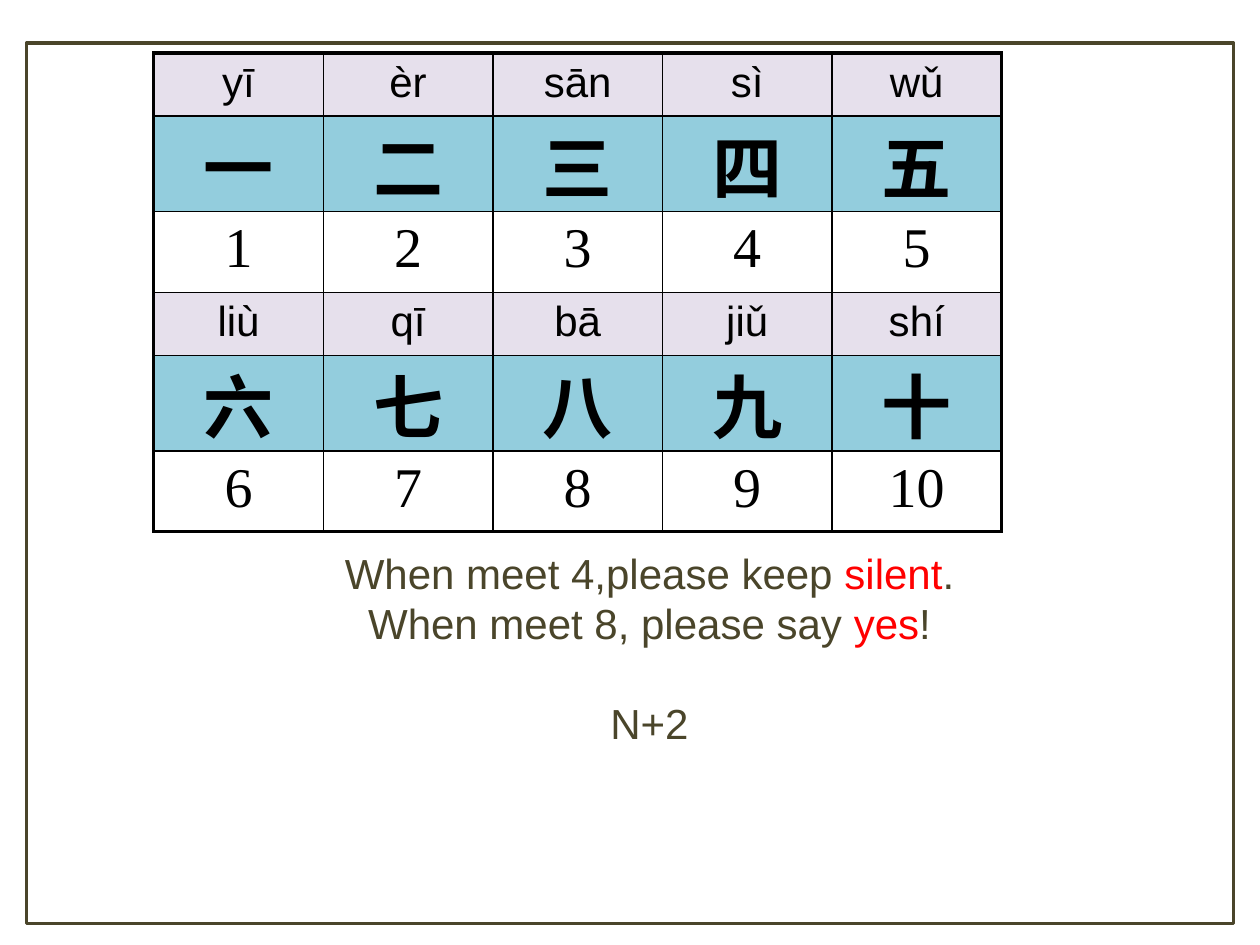
"""Build a slide with the Chinese numbers one to ten and the rules of a counting game."""
from lxml import etree
from pptx import Presentation
from pptx import util as u
from pptx.dml.color import RGBColor
from pptx.enum import shapes, text
from pptx.oxml.ns import qn

COLORS = {"black": "000000", "olive": "4A452A", "red": "FF0000",
          "lilac": "E6E0EC", "aqua": "93CDDD"}


def add_text(paragraph, content, font="Arial", size=24, color="olive", bold=False):
    paragraph.alignment = text.PP_ALIGN.CENTER
    run = paragraph.add_run()
    run.text = content
    run.font.name, run.font.size, run.font.bold = font, u.Pt(size), bold
    run.font.color.rgb = RGBColor.from_string(COLORS[color])
    etree.SubElement(run.font._element, qn("a:ea"), typeface=font)


def add_border(cell, side, width):
    line = etree.SubElement(cell._tc.get_or_add_tcPr(), qn(f"a:ln{side}"), w=str(u.Pt(width)))
    fill = etree.SubElement(line, qn("a:solidFill"))
    etree.SubElement(fill, qn("a:srgbClr"), val=COLORS["black"])


presentation = Presentation()
presentation.slide_width, presentation.slide_height = u.Inches(10), u.Inches(7.5)
slide = presentation.slides.add_slide(presentation.slide_layouts[6])
left = u.Inches(1.22)

numbers = [
    ["yī", "èr", "sān", "sì", "wǔ"], list("一二三四五"), list("12345"),
    ["liù", "qī", "bā", "jiǔ", "shí"], list("六七八九十"), ["6", "7", "8", "9", "10"],
]
row_styles = [
    {"height": 0.5, "fill": "lilac", "format": {"size": 24}},
    {"height": 0.76, "fill": "aqua",
     "format": {"font": "Noto Sans CJK SC", "size": 40, "bold": True}},
    {"height": 0.64, "fill": None, "format": {"font": "Times New Roman", "size": 32}},
]
row_count, column_count = len(numbers), len(numbers[0])
table_height = 2 * sum(style["height"] for style in row_styles)
table = slide.shapes.add_table(row_count, column_count, left, u.Inches(0.42),
                               u.Inches(6.73), u.Inches(table_height)).table
table.first_row = table.horz_banding = False

for row, words in enumerate(numbers):
    style = row_styles[row % len(row_styles)]
    table.rows[row].height = u.Inches(style["height"])
    for column, word in enumerate(words):
        cell = table.cell(row, column)
        cell.margin_left = cell.margin_right = u.Inches(0.07)
        cell.margin_top = cell.margin_bottom = u.Inches(0.05)
        paragraph = cell.text_frame.paragraphs[0]
        add_text(paragraph, word, color="black", **style["format"])
        if style["fill"] == "aqua":
            paragraph.line_spacing = 0.8
            cell.margin_top, cell.margin_bottom = u.Inches(0.11), 0
        outer_sides = {"L": column == 0, "R": column == column_count - 1,
                       "T": row == 0, "B": row == row_count - 1}
        for side, outer in outer_sides.items():
            add_border(cell, side, 2.25 if outer else 1)
        if style["fill"]:
            cell.fill.solid()
            cell.fill.fore_color.rgb = RGBColor.from_string(COLORS[style["fill"]])
        else:
            cell.fill.background()

frame = slide.shapes.add_shape(shapes.MSO_SHAPE.RECTANGLE, u.Inches(0.21), u.Inches(0.34),
                               u.Inches(9.58), u.Inches(6.99))
frame.shadow.inherit = False
frame.fill.background()
frame.line.color.rgb = RGBColor.from_string(COLORS["olive"])
frame.line.width = u.Pt(2)

rules = [
    [("When meet 4,please keep ", "olive"), ("silent", "red"), (".", "olive")],
    [("When meet 8, please say ", "olive"), ("yes", "red"), ("!", "olive")],
    [("N+2", "olive")],
]
line_height = u.Pt(28.6)
rules_box = slide.shapes.add_textbox(left, u.Inches(4.3), u.Inches(7.87), u.Inches(1.72))
rules_frame = rules_box.text_frame
rules_frame.word_wrap = True
for index, parts in enumerate(rules):
    paragraph = rules_frame.add_paragraph() if index else rules_frame.paragraphs[0]
    paragraph.line_spacing = line_height
    if index == len(rules) - 1:
        paragraph.space_before = line_height
    for content, color in parts:
        add_text(paragraph, content, color=color)

presentation.save("out.pptx")
